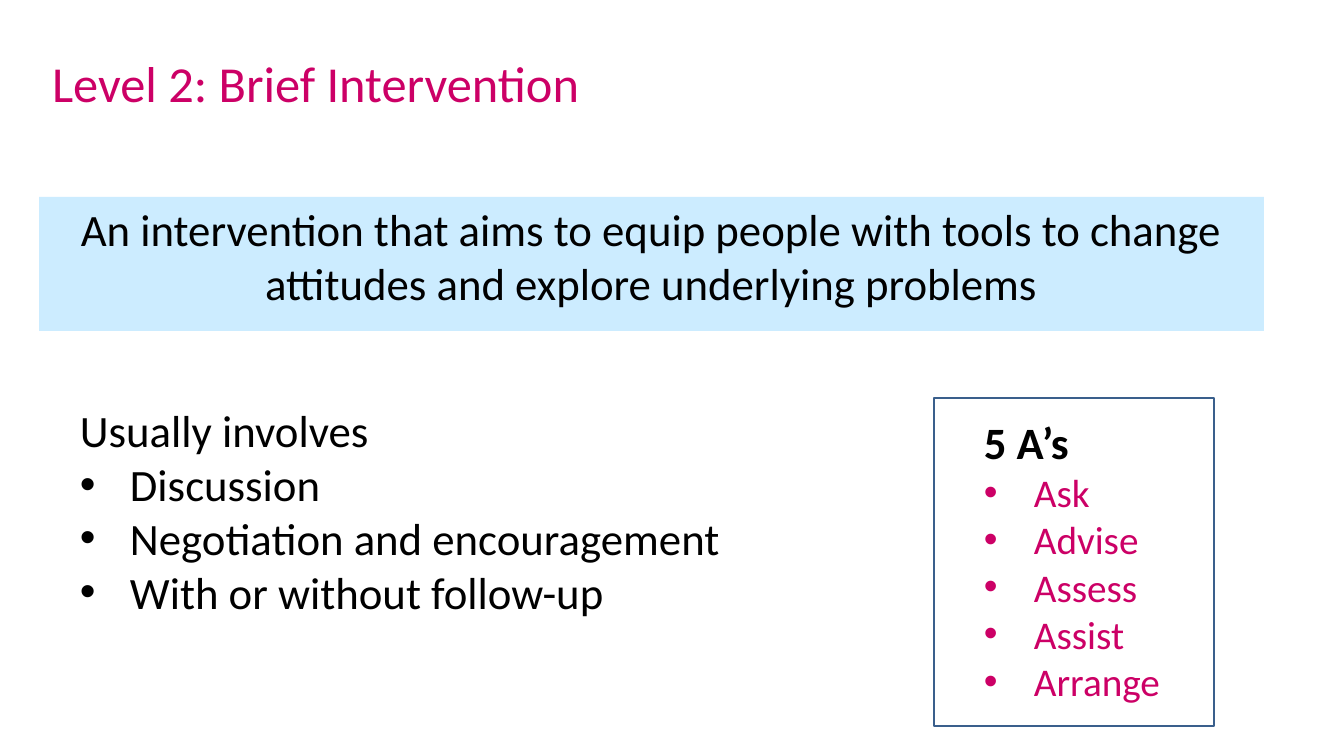
import pptx
import pptx.util
import pptx.dml.color
import pptx.enum.shapes
import pptx.enum.text
import lxml.etree

PX = 914400 / 100.8
PINK = pptx.dml.color.RGBColor(0xCC, 0x00, 0x66)
BLACK = pptx.dml.color.RGBColor(0x00, 0x00, 0x00)
SKY = pptx.dml.color.RGBColor(0xCC, 0xEC, 0xFF)
NAVY = pptx.dml.color.RGBColor(0x3A, 0x5F, 0x8C)
FACE = "Calibri"
STEP = 50
ALIGN = pptx.enum.text.PP_ALIGN
ANCHOR = pptx.enum.text.MSO_ANCHOR


def emu(*lengths):
    return [pptx.util.Emu(round(n * PX)) for n in lengths]


def place(shape, box):
    shape.left, shape.top, shape.width, shape.height = emu(*box)


def style(para, size, color, bold=False, align=ALIGN.LEFT):
    para.alignment = align
    para.space_before = pptx.util.Pt(0)
    font = para.font
    font.name = FACE
    font.size = pptx.util.Pt(size)
    font.bold = bold
    font.color.rgb = color


def mark(para, char=None):
    props = para._p.get_or_add_pPr()
    indent = emu(STEP)[0] if char else 0
    props.set("marL", str(indent))
    props.set("indent", str(-indent))
    space = pptx.oxml.ns.qn
    if char:
        face = lxml.etree.SubElement(props, space("a:buFont"))
        face.set("typeface", "Arial")
        lxml.etree.SubElement(props, space("a:buChar")).set("char", char)
    else:
        lxml.etree.SubElement(props, space("a:buNone"))


def head(slide, box, text):
    title = slide.shapes.title
    place(title, box)
    frame = title.text_frame
    frame.text = text
    frame.vertical_anchor = ANCHOR.MIDDLE
    style(frame.paragraphs[0], 36, PINK)


def band(slide, box, text):
    body = slide.placeholders[1]
    place(body, box)
    body.fill.solid()
    body.fill.fore_color.rgb = SKY
    frame = body.text_frame
    frame.text = text
    frame.auto_size = pptx.enum.text.MSO_AUTO_SIZE.NONE
    frame.vertical_anchor = ANCHOR.TOP
    para = frame.paragraphs[0]
    mark(para)
    style(para, 32, BLACK, align=ALIGN.CENTER)


def points(slide, box, lead, items, size, color, bold=False):
    frame = slide.shapes.add_textbox(*emu(*box)).text_frame
    frame.word_wrap = True
    first = frame.paragraphs[0]
    first.text = lead
    style(first, 32, BLACK, bold)
    for item in items:
        para = frame.add_paragraph()
        para.text = item
        mark(para, "•")
        style(para, size, color)


def card(slide, box, lead, items):
    left, top, width, height = box
    inner = left + 40, top + 12, width - 49, height - 13
    points(slide, inner, lead, items, 28, PINK, True)
    kind = pptx.enum.shapes.MSO_SHAPE.RECTANGLE
    edge = slide.shapes.add_shape(kind, *emu(*box))
    edge.shadow.inherit = False
    edge.fill.background()
    edge.line.color.rgb = NAVY
    edge.line.width = pptx.util.Pt(2)


def main():
    deck = pptx.Presentation()
    deck.slide_width, deck.slide_height = emu(1344, 756)
    slide = deck.slides.add_slide(deck.slide_layouts[1])
    head(slide, (42, 19, 840, 126), "Level 2: Brief Intervention")
    band(slide, (39, 197, 1225, 134),
         "An intervention that aims to equip people with tools to change "
         "attitudes and explore underlying problems")
    points(slide, (70, 398, 663, 281), "Usually involves",
           ["Discussion", "Negotiation and encouragement",
            "With or without follow-up"], 32, BLACK)
    card(slide, (934, 398, 280, 328), "5 A’s",
         ["Ask", "Advise", "Assess", "Assist", "Arrange"])
    deck.save("out.pptx")


if __name__ == "__main__":
    main()
